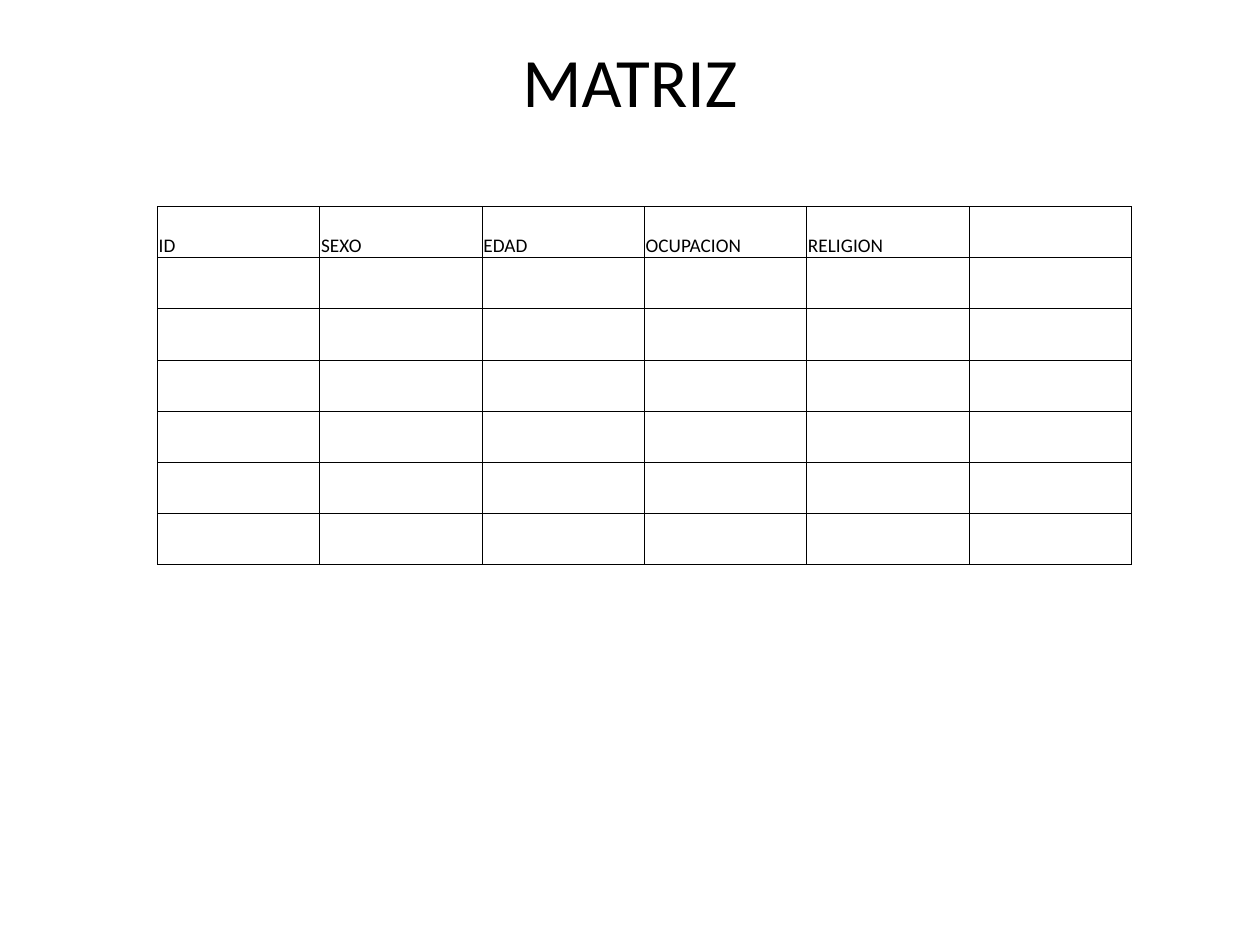
from lxml import etree
from pptx import Presentation
from pptx.dml.color import RGBColor
from pptx.enum.text import MSO_ANCHOR, PP_ALIGN
from pptx.oxml.ns import qn
from pptx.util import Inches, Pt

BLACK = RGBColor(0, 0, 0)
WHITE = RGBColor(255, 255, 255)
FONT = "Calibri"
HEADERS = ["ID", "SEXO", "EDAD", "OCUPACION", "RELIGION", ""]
ROW_COUNT = 7


def add_run(paragraph, text, size):
    run = paragraph.add_run()
    run.text = text
    run.font.name = FONT
    run.font.size = Pt(size)
    run.font.color.rgb = BLACK


def set_margins(target, left, top, right, bottom):
    target.margin_left = Inches(left)
    target.margin_top = Inches(top)
    target.margin_right = Inches(right)
    target.margin_bottom = Inches(bottom)


def add_title(slide, left, top, width, height):
    shape = slide.shapes.add_textbox(left, top, width, height)
    frame = shape.text_frame
    frame.word_wrap = True
    frame.vertical_anchor = MSO_ANCHOR.TOP
    set_margins(frame, 0.1, 0, 0.1, 0)
    paragraph = frame.paragraphs[0]
    paragraph.alignment = PP_ALIGN.CENTER
    add_run(paragraph, "MATRIZ", 39.6)


def style_cell(cell):
    properties = cell._tc.get_or_add_tcPr()
    for side in ("a:lnL", "a:lnR", "a:lnT", "a:lnB"):
        line = etree.SubElement(properties, qn(side), w=str(Pt(0.5)))
        fill = etree.SubElement(line, qn("a:solidFill"))
        etree.SubElement(fill, qn("a:srgbClr"), val=str(BLACK))
    cell.fill.solid()
    cell.fill.fore_color.rgb = WHITE
    cell.vertical_anchor = MSO_ANCHOR.BOTTOM
    set_margins(cell, 0.01, 0.01, 0.01, 0)


def add_matrix(slide, left, top, width, height):
    frame = slide.shapes.add_table(ROW_COUNT, len(HEADERS), left, top, width, height)
    table = frame.table
    table.first_row = False
    table.horz_banding = False
    for cell in table.iter_cells():
        style_cell(cell)
    for column, header in enumerate(HEADERS):
        if header:
            add_run(table.cell(0, column).text_frame.paragraphs[0], header, 11)


def main():
    presentation = Presentation()
    presentation.slide_width = Inches(10)
    presentation.slide_height = Inches(7.5)
    slide = presentation.slides.add_slide(presentation.slide_layouts[6])
    add_title(slide, Inches(0.5), Inches(0.3), Inches(9), Inches(1.25))
    add_matrix(slide, Inches(1.25), Inches(1.64), Inches(7.73), Inches(2.84))
    presentation.save("out.pptx")


if __name__ == "__main__":
    main()
